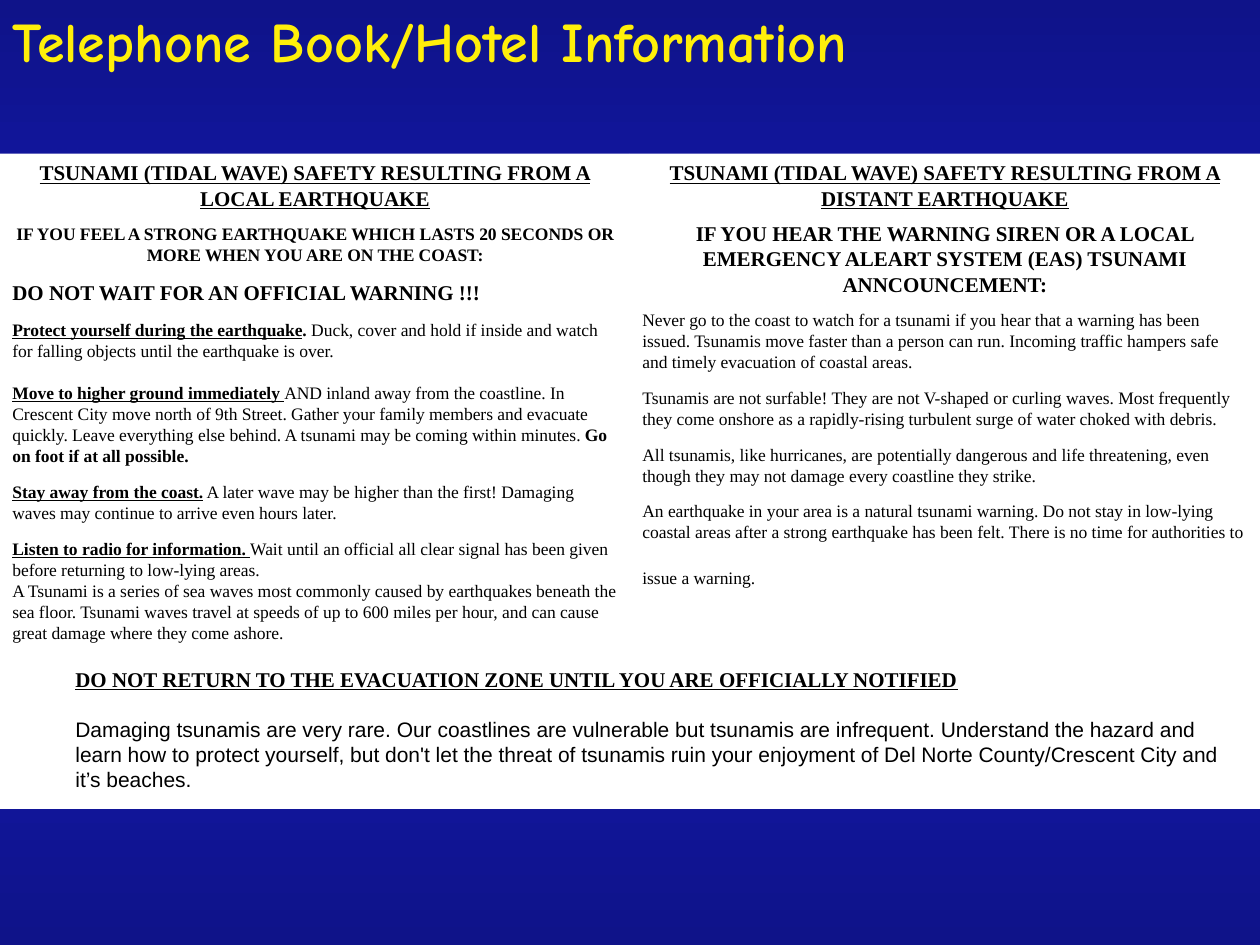
from copy import deepcopy
from dataclasses import dataclass

from pptx import Presentation
from pptx.dml.color import RGBColor
from pptx.enum.shapes import MSO_SHAPE as Preset
from pptx.enum.text import MSO_ANCHOR as Anchor, MSO_AUTO_SIZE as AutoSize, PP_ALIGN as Align
from pptx.oxml.ns import qn
from pptx.util import Inches, Pt

COLORS = {
    "edge": "0F1389",
    "middle": "151ABF",
    "panel": "FFFFFF",
    "text": "000000",
    "title": "FFEF0A",
}
SERIF, SANS, COMIC = "Times New Roman", "Arial", "Comic Neue"


@dataclass
class Span:
    text: str
    bold: bool = False
    underline: bool = False
    size: float | None = None


@dataclass
class Block:
    spans: list[Span]
    size: float = 10
    before: float = 0
    centered: bool = False
    font: str = SERIF
    indent: float = 0


@dataclass
class Panel:
    left: float
    top: float
    width: float
    height: float
    blocks: list[Block]


def heading(text: str, **options) -> Block:
    return Block([Span(text, bold=True, underline=True)], size=12, **options)


def notice(text: str, **options) -> Block:
    return Block([Span(text, bold=True)], **options)


def advice(lead: str, *rest: Span, before: float = 8.4) -> Block:
    """Paragraph that opens with a bold, underlined instruction."""
    return Block([Span(lead, bold=True, underline=True), *rest], before=before)


def plain(text: str, **options) -> Block:
    return Block([Span(text)], **options)


PANELS = [
    Panel(0, 1.22, 5, 4.27, [
        heading("TSUNAMI (TIDAL WAVE) SAFETY RESULTING FROM A LOCAL EARTHQUAKE", centered=True),
        notice("IF YOU FEEL A STRONG EARTHQUAKE WHICH LASTS 20 SECONDS OR MORE WHEN YOU ARE "
               "ON THE COAST:", before=7, centered=True),
        notice("DO NOT WAIT FOR AN OFFICIAL WARNING !!!", size=12, before=8.4),
        advice("Protect yourself during the earthquake", Span(".", bold=True),
               Span(" Duck, cover and hold if inside and watch for falling objects until the "
                    "earthquake is over.")),
        advice("Move to higher ground immediately ",
               Span("AND inland away from the coastline. In Crescent City move north of 9th "
                    "Street. Gather your family members and evacuate quickly. Leave everything "
                    "else behind. A tsunami may be coming within minutes. "),
               Span("Go on foot if at all possible.", bold=True), before=12),
        advice("Stay away from the coast.",
               Span(" A later wave may be higher than the first! Damaging waves may continue to "
                    "arrive even hours later.")),
        advice("Listen to radio for information. ",
               Span("Wait until an official all clear signal has been given before returning to "
                    "low-lying areas.")),
        plain("A Tsunami is a series of sea waves most commonly caused by earthquakes beneath "
              "the sea floor. Tsunami waves travel at speeds of up to 600 miles per hour, and "
              "can cause great damage where they come ashore."),
    ]),
    Panel(5, 1.22, 5, 4.33, [
        heading("TSUNAMI (TIDAL WAVE) SAFETY RESULTING FROM A DISTANT EARTHQUAKE", centered=True),
        notice("IF YOU HEAR THE WARNING SIREN OR A LOCAL EMERGENCY ALEART SYSTEM (EAS) TSUNAMI "
               "ANNCOUNCEMENT:", size=12, before=6, centered=True),
        plain("Never go to the coast to watch for a tsunami if you hear that a warning has been "
              "issued. Tsunamis move faster than a person can run. Incoming traffic hampers safe "
              "and timely evacuation of coastal areas.", before=7.2),
        plain("Tsunamis are not surfable! They are not V-shaped or curling waves. Most frequently "
              "they come onshore as a rapidly-rising turbulent surge of water choked with debris.",
              before=8.4),
        plain("All tsunamis, like hurricanes, are potentially dangerous and life threatening, "
              "even though they may not damage every coastline they strike.", before=8.4),
        Block([Span("An earthquake in your area is a natural tsunami warning. Do not stay in "
                    "low-lying coastal areas after a strong earthquake has been felt. There is "
                    "no time for authorities to issue a warning."),
               Span(" ", size=24)], before=8.4),
    ]),
    Panel(0, 5.24, 10, 1.18, [
        heading("DO NOT RETURN TO THE EVACUATION ZONE UNTIL YOU ARE OFFICIALLY NOTIFIED",
                indent=0.5),
        plain("Damaging tsunamis are very rare. Our coastlines are vulnerable but tsunamis are "
              "infrequent. Understand the hazard and learn how to protect yourself, but don't "
              "let the threat of tsunamis ruin your enjoyment of Del Norte County/Crescent City "
              "and it’s beaches.", size=12, before=14, font=SANS, indent=0.5),
    ]),
]


def rgb(name: str) -> RGBColor:
    return RGBColor.from_string(COLORS[name])


def paint_background(slide) -> None:
    """Vertical gradient, brightest halfway down."""
    fill = slide.background.fill
    fill.gradient()
    fill.gradient_angle = 270
    stop_list = slide.element.find(".//" + qn("a:gsLst"))
    stop_list.insert(1, deepcopy(stop_list[0]))
    for stop, name, position in zip(fill.gradient_stops, ("edge", "middle", "edge"), (0, 0.5, 1)):
        stop.color.rgb = rgb(name)
        stop.position = position


def write_blocks(text_frame, blocks: list[Block], color: str) -> None:
    text_frame.word_wrap = True
    text_frame.vertical_anchor = Anchor.TOP
    for index, block in enumerate(blocks):
        paragraph = text_frame.add_paragraph() if index else text_frame.paragraphs[0]
        paragraph.alignment = Align.CENTER if block.centered else Align.LEFT
        paragraph.space_before = Pt(block.before)
        if block.indent:
            paragraph.level = 1
            properties = paragraph._p.get_or_add_pPr()
            properties.set("marL", str(Inches(block.indent)))
            properties.set("indent", "0")
        for span in block.spans:
            run = paragraph.add_run()
            run.text = span.text
            font = run.font
            font.name = block.font
            font.size = Pt(span.size or block.size)
            font.bold = span.bold
            font.underline = span.underline
            font.color.rgb = rgb(color)


def add_panel(slide, panel: Panel) -> None:
    shape = slide.shapes.add_shape(Preset.RECTANGLE, Inches(panel.left), Inches(panel.top),
                                   Inches(panel.width), Inches(panel.height))
    shape.shadow.inherit = False
    shape.fill.solid()
    shape.fill.fore_color.rgb = rgb("panel")
    shape.line.fill.background()
    write_blocks(shape.text_frame, panel.blocks, "text")


def add_title(slide, text: str) -> None:
    box = slide.shapes.add_textbox(0, 0, Inches(10), Inches(0.72))
    write_blocks(box.text_frame, [notice(text, size=32, font=COMIC)], "title")
    box.text_frame.auto_size = AutoSize.SHAPE_TO_FIT_TEXT


def main() -> None:
    presentation = Presentation()
    presentation.slide_width, presentation.slide_height = Inches(10), Inches(7.5)
    slide = presentation.slides.add_slide(presentation.slide_layouts[6])
    paint_background(slide)
    for panel in PANELS:
        add_panel(slide, panel)
    add_title(slide, "Telephone Book/Hotel Information")
    presentation.save("out.pptx")


if __name__ == "__main__":
    main()
